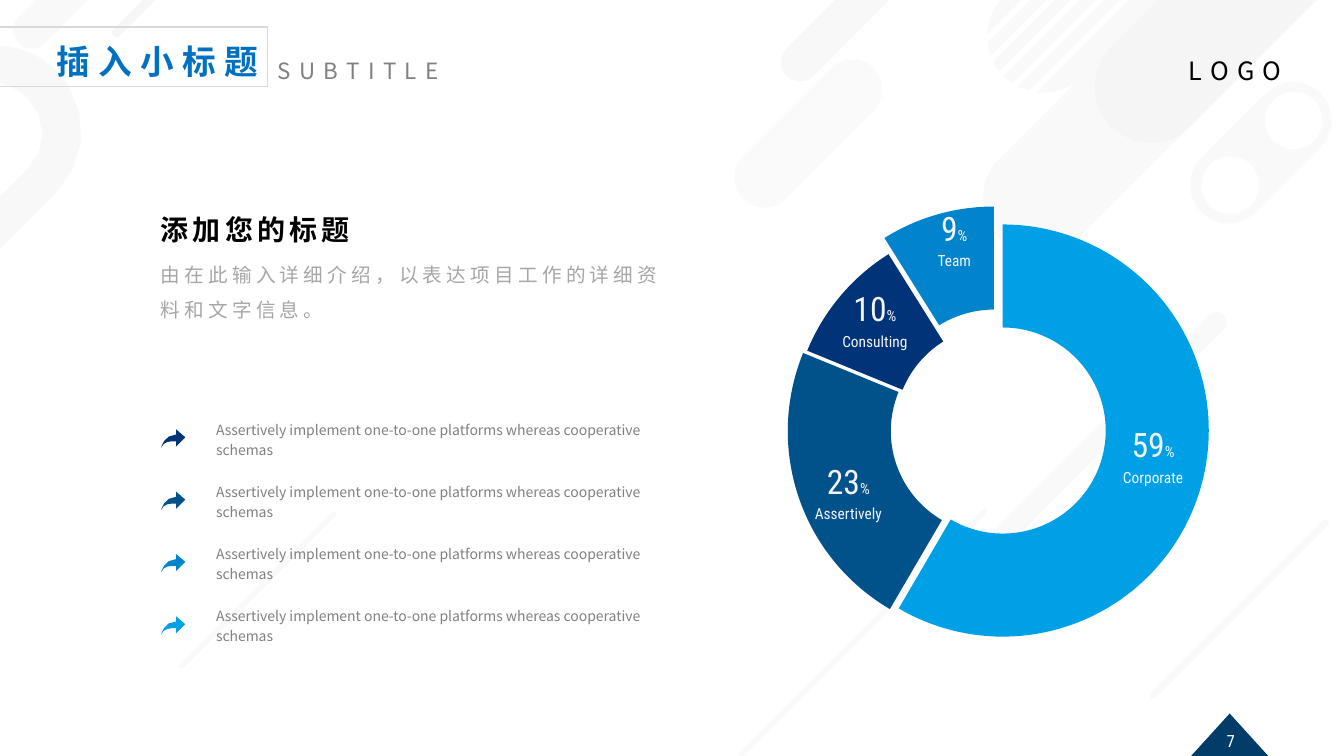
import pptx
import pptx.util
import pptx.chart.data
from dataclasses import dataclass
from lxml import etree
from pptx.dml.color import RGBColor
from pptx.enum.chart import XL_CHART_TYPE
from pptx.enum.shapes import MSO_SHAPE
from pptx.enum.text import MSO_ANCHOR, MSO_AUTO_SIZE, PP_ALIGN
from pptx.oxml.ns import qn
from pptx.util import Cm


@dataclass(frozen=True)
class Theme:
    sans: str = "Noto Sans CJK SC"
    wide: str = "Noto Sans CJK JP"
    narrow: str = "Roboto Condensed"
    pale: str = "F2F2F2"
    white: str = "FFFFFF"
    black: str = "000000"
    frame: str = "D9D9D9"
    title: str = "0070C0"
    gray: str = "808080"
    light_gray: str = "A6A6A6"
    label: str = "F4F5FC"
    corner: str = "013D68"
    navy: str = "003378"
    deep: str = "01518A"
    blue: str = "0184CB"
    sky: str = "00A0E6"
    title_size: int = 24
    heading_size: int = 20
    logo_size: int = 18
    subtitle_size: int = 16
    intro_size: int = 14
    number_size: int = 12
    unit_size: int = 11
    list_size: int = 10


class SlideBuilder:
    def __init__(self, page, theme):
        self.page, self.theme = page, theme

    def paint(self, shape, color, opacity=100):
        shape.shadow.inherit = False
        shape.fill.solid()
        shape.fill.fore_color.rgb = RGBColor.from_string(color)
        shape.line.fill.background()
        if opacity < 100:
            tint = shape._element.spPr.find(".//" + qn("a:srgbClr"))
            etree.SubElement(tint, qn("a:alpha"), val=str(opacity * 1000))

    def shape(self, kind, area, color, opacity=100, rotation=0):
        shape = self.page.shapes.add_shape(kind, *map(Cm, area))
        self.paint(shape, color, opacity)
        shape.rotation = rotation
        return shape

    def bar(self, area, color, opacity=100):
        self.shape(MSO_SHAPE.ROUNDED_RECTANGLE, area, color, opacity, 45).adjustments[0] = 0.5

    def outline(self, start, steps, color, opacity=100, origin=(0, 0), pieces=4):
        """Each step is one point for a line or three for a Bézier curve."""
        points = [start]
        for step in steps:
            if len(step) == 1:
                points.append(step[0])
                continue
            knots = (points[-1], *step)
            for i in range(1, pieces + 1):
                t = i / pieces
                weights = ((1 - t) ** 3, 3 * t * (1 - t) ** 2, 3 * t * t * (1 - t), t ** 3)
                points.append(tuple(sum(w * k[axis] for w, k in zip(weights, knots)) for axis in (0, 1)))
        placed = [(Cm(origin[0] + x), Cm(origin[1] + y)) for x, y in points]
        builder = self.page.shapes.build_freeform(*placed[0])
        builder.add_line_segments(placed[1:], close=True)
        self.paint(builder.convert_to_shape(), color, opacity)

    def span(self, para, text, size, color, font=None, bold=False, tracking=0):
        span = para.add_run()
        span.text = text
        span.font.size = pptx.util.Pt(size)
        span.font.bold = bold
        span.font.name = font or self.theme.sans
        span.font.color.rgb = RGBColor.from_string(color)
        props = span._r.get_or_add_rPr()
        etree.SubElement(props, qn("a:ea"), typeface=font or self.theme.sans)
        if tracking:
            props.set("spc", str(tracking * 100))

    def para(self, frame, index=0, align=PP_ALIGN.LEFT, leading=None, after=0):
        para = frame.paragraphs[0] if index == 0 else frame.add_paragraph()
        para.alignment = align
        para.space_before = pptx.util.Pt(0)
        para.space_after = pptx.util.Pt(after)
        if leading:
            para.line_spacing = pptx.util.Pt(leading)
        return para

    def text_box(self, area, wrap=True, anchor=MSO_ANCHOR.TOP):
        frame = self.page.shapes.add_textbox(*map(Cm, area)).text_frame
        frame.word_wrap = wrap
        frame.vertical_anchor = anchor
        return frame

    def placeholder(self, index, area, anchor):
        box = self.page.placeholders[index]
        box.left, box.top, box.width, box.height = map(Cm, area)
        self.page.shapes._spTree.append(box._element)
        box.text_frame.word_wrap = True
        box.text_frame.auto_size = MSO_AUTO_SIZE.NONE
        box.text_frame.vertical_anchor = anchor
        return box

    def doughnut(self, area, slices):
        data = pptx.chart.data.CategoryChartData()
        data.categories = [str(i + 1) for i in range(len(slices))]
        data.add_series("Series 1", [value for value, _, _ in slices])
        chart = self.page.shapes.add_chart(XL_CHART_TYPE.DOUGHNUT, *map(Cm, area), data).chart
        chart.has_legend = chart.has_title = False
        chart.font.size = pptx.util.Pt(self.theme.list_size)
        chart.font.name = self.theme.sans
        chart.font.color.rgb = RGBColor.from_string(self.theme.black)
        plot = chart.plots[0]
        plot.vary_by_categories = True
        plot.has_data_labels = False
        plot._element.find(qn("c:holeSize")).set("val", "42")
        series = plot.series[0]
        for i, (_, color, offset) in enumerate(slices):
            look = series.points[i].format
            look.fill.solid()
            look.fill.fore_color.rgb = RGBColor.from_string(color)
            look.line.fill.background()
            if offset:
                point = series._element.findall(qn("c:dPt"))[i]
                burst = etree.Element(qn("c:explosion"), val=str(offset))
                point.find(qn("c:spPr")).addprevious(burst)
        # Fixed plot area
        area_xml = chart._chartSpace.find(".//" + qn("c:plotArea"))
        for old in area_xml.findall(qn("c:layout")):
            area_xml.remove(old)
        layout = etree.Element(qn("c:layout"))
        area_xml.insert(0, layout)
        manual = etree.SubElement(layout, qn("c:manualLayout"))
        for tag, value in (("layoutTarget", "inner"), ("xMode", "edge"), ("yMode", "edge"),
                           ("x", "0.065"), ("y", "0.12"), ("w", "0.87"), ("h", "0.76")):
            etree.SubElement(manual, qn("c:" + tag), val=value)


def main():
    deck = pptx.Presentation()
    deck.slide_width, deck.slide_height = Cm(33.87), Cm(19.05)
    theme = Theme()
    page = deck.slides.add_slide(deck.slide_layouts[1])
    build = SlideBuilder(page, theme)

    # Page number
    build.shape(MSO_SHAPE.ISOSCELES_TRIANGLE, (30, 17.98, 1.98, 1.09), theme.corner)
    number = build.text_box((29.92, 18.31, 1.45, 0.71), anchor=MSO_ANCHOR.MIDDLE)
    build.span(build.para(number, align=PP_ALIGN.RIGHT), "7", theme.number_size, theme.white, theme.narrow)

    # Background decoration
    build.outline((0, 1.17), [
        [(0.2, 1.17)], [(0.51, 1.22), (0.81, 1.32), (1.07, 1.5)], [(1.42, 1.78)], [(1.7, 2.13)],
        [(2.26, 2.97), (2.16, 4.11), (1.42, 4.85)], [(0, 6.27)], [(0, 4.95)], [(0.71, 4.24)],
        [(1.19, 3.76), (1.19, 2.97), (0.71, 2.49)], [(0.53, 2.31), (0.3, 2.18), (0.08, 2.13)],
        [(0, 2.13)]], theme.pale, 50)
    for left, top, opacity in ((29.29, -7.32, 46), (32.11, -10.13, 50), (29.39, -11.4, 45)):
        build.bar((left, top, 2.82, 15.6), theme.pale, opacity)
    build.bar((30.81, 1.73, 1.93, 4.24), theme.pale, 40)
    for left, top in ((31.88, 2.31), (30.28, 3.94)):
        build.shape(MSO_SHAPE.OVAL, (left, top, 1.45, 1.45), theme.white)
    for i in range(5):
        build.bar((24.61 + 0.62 * i, -6.07, 0.15, 14.48), theme.white)
    for *area, opacity in (
            (6.43, 12.09, 0.13, 5.56, 45), (21.06, 11.28, 0.13, 10.59, 40),
            (26.82, 6.38, 0.51, 10.64, 40), (19.61, 1.04, 1.52, 4.65, 37),
            (20.98, -2.06, 0.97, 4.65, 50), (31.14, 12.19, 0.18, 6.32, 40),
            (3.99, -2.11, 0.23, 3.53, 60), (1.24, -1.9, 0.94, 3.51, 40)):
        build.bar(area, theme.pale, opacity)

    # Header
    title = build.placeholder(0, (-2.87, 0.68, 9.62, 1.49), MSO_ANCHOR.BOTTOM)
    title.line.color.rgb = RGBColor.from_string(theme.frame)
    title.line.width = pptx.util.Pt(0.75)
    build.span(build.para(title.text_frame, align=PP_ALIGN.RIGHT), "插入小标题",
               theme.title_size, theme.title, bold=True, tracking=6)
    for area, text, size, color, font in (
            ((6.75, 1.32, 4.78, 0.94), "SUBTITLE", theme.subtitle_size, theme.gray, theme.wide),
            ((29.71, 1.27, 3.2, 1.02), "LOGO", theme.logo_size, theme.black, theme.sans)):
        build.span(build.para(build.text_box(area, wrap=False)), text, size, color, font, tracking=6)

    # Doughnut: value, colour, offset from the centre
    build.doughnut((19.2, 3.94, 11.94, 13.77), [
        (59, theme.sky, 4), (23, theme.deep, 5), (10, theme.navy, 1), (9, theme.blue, 17)])

    # Arrow list
    arrow = [[(0.38, 0.43)], [(0.61, 0.2)], [(0.38, 0)], [(0.38, 0.13)],
             [(0.08, 0.13), (0, 0.46), (0, 0.46)], [(0.08, 0.3), (0.2, 0.3), (0.38, 0.3)]]
    points = build.placeholder(1, (5.19, 10.41, 11.73, 6), MSO_ANCHOR.TOP).text_frame
    for i, color in enumerate((theme.navy, theme.deep, theme.blue, theme.sky)):
        build.outline((0.38, 0.3), arrow, color, origin=(4.06, 10.82 + 1.57 * i))
        para = build.para(points, i, leading=14.4, after=15.5)
        props = para._p.get_or_add_pPr()
        props.set("marL", "0")
        props.set("indent", "0")
        etree.SubElement(props, qn("a:buNone"))
        build.span(para, "Assertively implement one-to-one platforms whereas cooperative schemas",
                   theme.list_size, theme.gray)

    # Introduction
    heading = build.text_box((3.8, 4.83, 5.66, 1.4))
    build.span(build.para(heading, leading=35.3), "添加您的标题", theme.heading_size, theme.black,
               bold=True, tracking=3)
    intro = build.text_box((3.8, 6.2, 13.13, 1.96))
    build.span(build.para(intro, leading=25.2), "由在此输入详细介绍，以表达项目工作的详细资料和文字信息。",
               theme.intro_size, theme.light_gray, tracking=3)

    # Slice labels
    for left, top, value, name in ((19.97, 11.28, "23", "Assertively"), (27.65, 10.36, "59", "Corporate"),
                                   (22.64, 4.9, "9", "Team"), (20.64, 6.93, "10", "Consulting")):
        frame = build.text_box((left, top, 2.82, 2.06))
        para = build.para(frame, align=PP_ALIGN.CENTER, leading=34.7)
        build.span(para, value, theme.title_size, theme.label, theme.narrow)
        build.span(para, "%", theme.unit_size, theme.label, theme.narrow)
        para = build.para(frame, 1, PP_ALIGN.CENTER, leading=15.6)
        build.span(para, name, theme.unit_size, theme.label, theme.narrow)

    deck.save("out.pptx")


if __name__ == "__main__":
    main()
